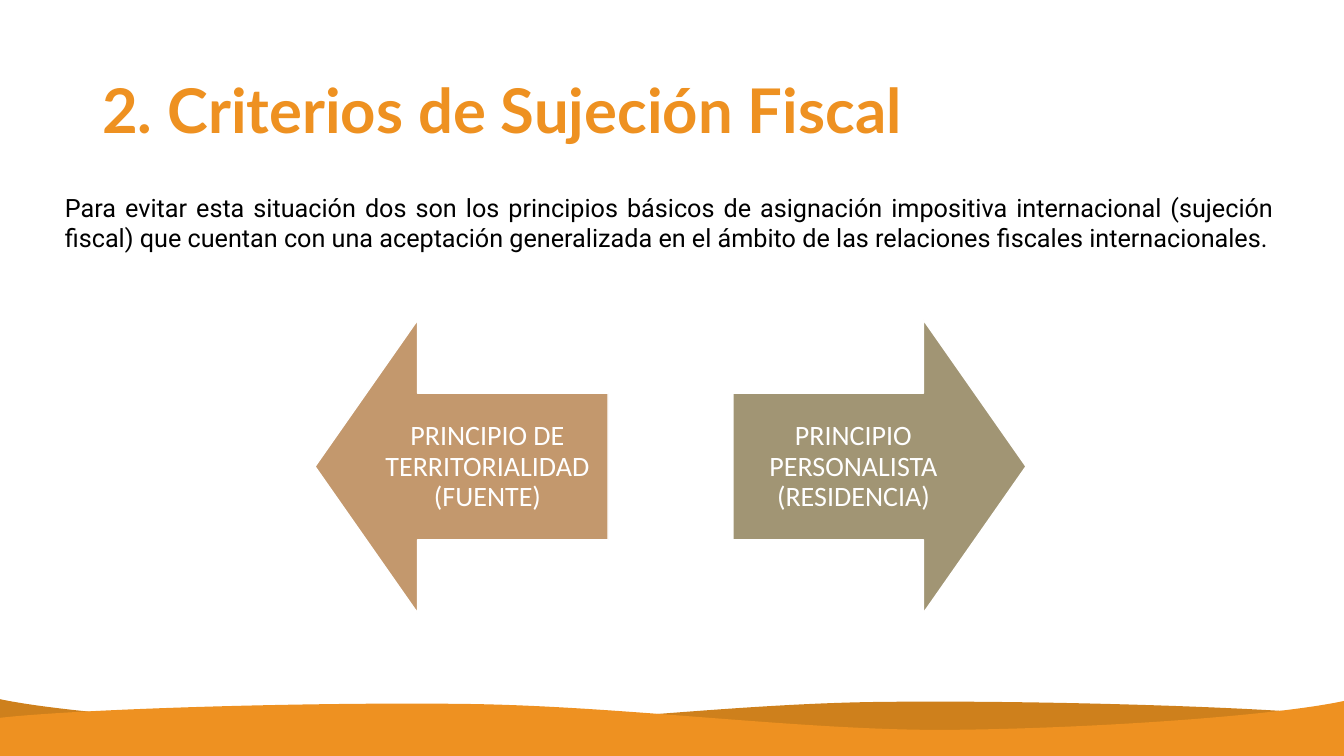
from dataclasses import dataclass

from lxml.etree import SubElement
from pptx import Presentation
from pptx.dml.color import RGBColor
from pptx.enum.shapes import MSO_SHAPE as SHAPE
from pptx.enum.text import MSO_ANCHOR as ANCHOR, MSO_AUTO_SIZE as AUTO, PP_ALIGN as ALIGN
from pptx.oxml.ns import qn
from pptx.util import Emu, Pt


@dataclass(frozen=True)
class Theme:
    orange: str = "EE9121"
    dark_orange: str = "CE801C"
    tan: str = "C3986D"
    olive: str = "A19574"
    white: str = "FFFFFF"
    black: str = "000000"
    title_size: int = 44
    body_size: int = 18
    arrow_size: int = 20


T = Theme()

# Content
TITLE = "2. Criterios de Sujeción Fiscal"
INTRO = ("Para evitar esta situación dos son los principios básicos de asignación "
         "impositiva internacional (sujeción fiscal) que cuentan con una aceptación "
         "generalizada en el ámbito de las relaciones fiscales internacionales.")
# text, colour, rotation, arrow left, label left
ARROWS = [
    ("PRINCIPIO DE TERRITORIALIDAD (FUENTE)", T.tan, 270, 315, 367),
    ("PRINCIPIO PERSONALISTA (RESIDENCIA)", T.olive, 90, 733, 733),
]
# colour, start, Bézier points in threes, bottom corners
WAVES = [
    (T.dark_orange, (1344, 716),
     [(1266, 707), (1034, 700), (877, 702),
      (721, 704), (547, 728), (401, 728),
      (255, 727), (69, 714), (-1, 699)],
     [(-1, 755), (1344, 756)]),
    (T.orange, (-1, 718),
     [(77, 709), (308, 702), (466, 704),
      (623, 706), (795, 730), (942, 730),
      (1089, 729), (1275, 716), (1344, 701)],
     [(1344, 756), (0, 758)]),
]

# Layout, in px
SLIDE_W, SLIDE_H = 1344, 756
PX = 12192000 / SLIDE_W
ARROW_TOP, ARROW_SIDE = 320, 293
LABEL_TOP, LABEL_W, LABEL_H = 394, 241, 146


def px(*values):
    return [Emu(round(v * PX)) for v in values]


def write(shape, text, *, font, size, color, bold=False, align=ALIGN.LEFT,
          anchor=ANCHOR.TOP, spacing=None, after=None, inset=None):
    tf = shape.text_frame
    tf.word_wrap, tf.auto_size, tf.vertical_anchor = True, AUTO.NONE, anchor
    if inset is not None:
        tf.margin_left, tf.margin_top, tf.margin_right, tf.margin_bottom = px(*[inset] * 4)
    p = tf.paragraphs[0]
    p.alignment, p.line_spacing, p.space_after = align, spacing, after
    r = p.add_run()
    r.text = text
    r.font.name, r.font.size, r.font.bold = font, Pt(size), bold
    r.font.color.rgb = RGBColor.from_string(color)


def paint(shape, color, line=None):
    shape.shadow.inherit = False
    shape.fill.solid()
    shape.fill.fore_color.rgb = RGBColor.from_string(color)
    if line:
        shape.line.color.rgb = RGBColor.from_string(line)
        shape.line.width = Pt(1)
    else:
        shape.line.fill.background()


def bend(shape, count):
    """Turn the first count line segments into cubic curves, three points each."""
    lines = list(shape.element.iter(qn("a:lnTo")))[:count]
    for i in range(0, count, 3):
        outline = lines[i].getparent()
        cubic = SubElement(outline, qn("a:cubicBezTo"))
        outline.replace(lines[i], cubic)
        for line in lines[i:i + 3]:
            cubic.append(line[0])
        for line in lines[i + 1:i + 3]:
            outline.remove(line)


def main():
    prs = Presentation()
    prs.slide_width, prs.slide_height = px(SLIDE_W, SLIDE_H)
    s = prs.slides.add_slide(prs.slide_layouts[5])

    # Waves along the bottom, kept on the layout as background
    for color, start, curve, corners in WAVES:
        builder = s.shapes.build_freeform(*start, scale=PX)
        builder.add_line_segments(curve + corners, close=True)
        wave = builder.convert_to_shape()
        bend(wave, len(curve))
        paint(wave, color)
        s.slide_layout.shapes.element.append(wave.element)

    # Title and introduction
    title = s.shapes.title
    title.left, title.top, title.width, title.height = px(92, 41, 1159, 146)
    write(title, TITLE, font="Lato", size=T.title_size, color=T.orange, bold=True,
          anchor=ANCHOR.MIDDLE, spacing=0.9)
    intro = s.shapes.add_textbox(*px(55, 187, 1229, 72))
    write(intro, INTRO, font="Roboto", size=T.body_size, color=T.black,
          align=ALIGN.JUSTIFY)

    # Opposed arrows with upright labels
    diagram = s.shapes.add_group_shape()
    for text, color, rotation, left, label_left in ARROWS:
        arrow = diagram.shapes.add_shape(SHAPE.UP_ARROW,
                                         *px(left, ARROW_TOP, ARROW_SIDE, ARROW_SIDE))
        arrow.rotation = rotation
        arrow.adjustments[0], arrow.adjustments[1] = 0.5, 0.35
        paint(arrow, color, line=T.white)
        label = diagram.shapes.add_textbox(*px(label_left, LABEL_TOP, LABEL_W, LABEL_H))
        write(label, text, font="Calibri", size=T.arrow_size, color=T.white,
              align=ALIGN.CENTER, anchor=ANCHOR.MIDDLE, spacing=0.9,
              after=Pt(7), inset=16)

    prs.save("out.pptx")


if __name__ == "__main__":
    main()
